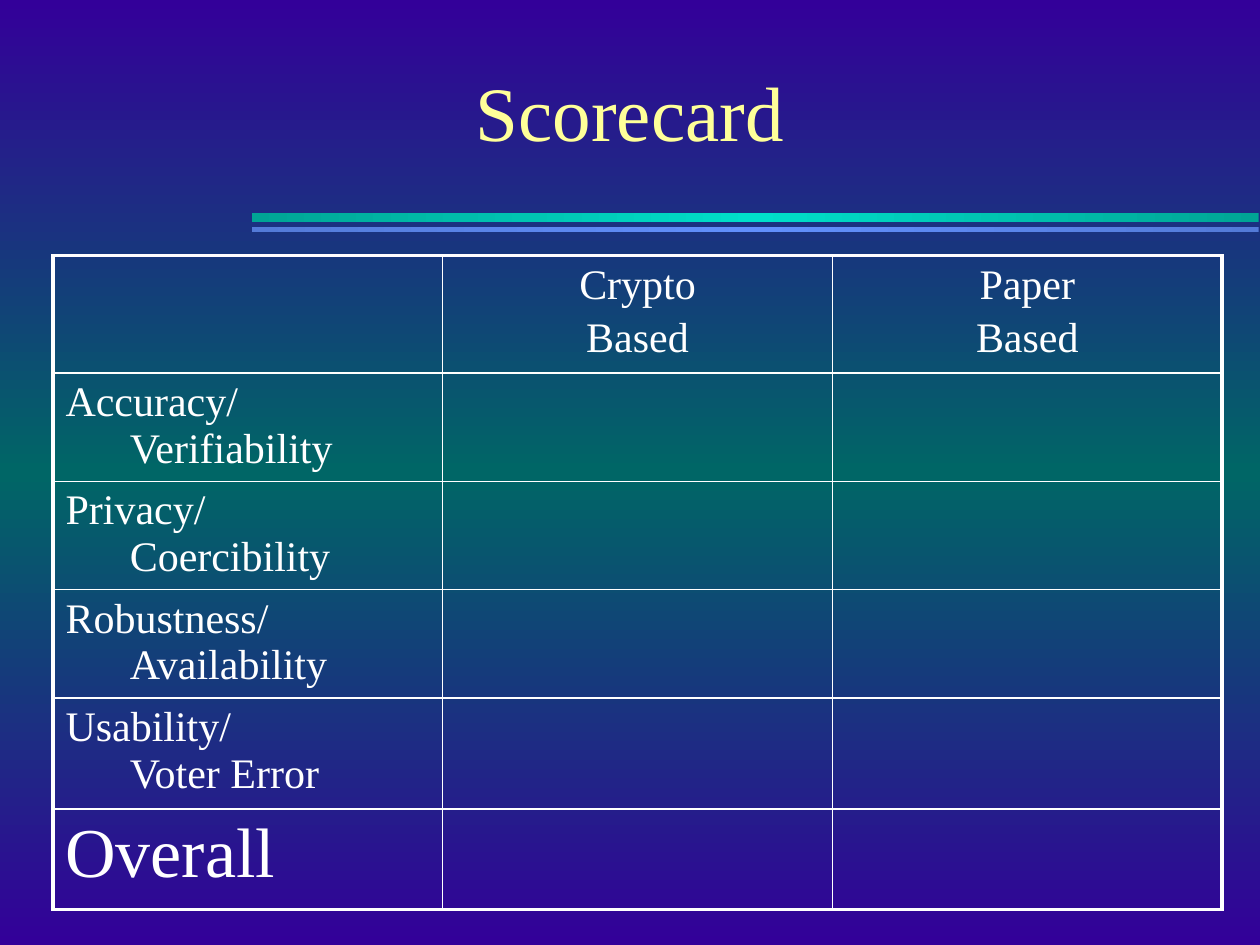
from copy import deepcopy
from dataclasses import dataclass

from pptx import Presentation
from pptx.dml.color import RGBColor
from pptx.enum.shapes import MSO_SHAPE as Shape
from pptx.enum.text import MSO_ANCHOR as Anchor, PP_ALIGN as Align
from pptx.oxml import parse_xml
from pptx.oxml.ns import nsdecls, qn
from pptx.util import Inches, Pt


@dataclass(frozen=True)
class Theme:
    font: str = "Times New Roman"
    title: str = "FFFF99"
    text: str = "FFFFFF"
    line: str = "FFFFFF"
    background: tuple = ("330099", "006666", "330099")
    upper_bar: tuple = ("00A595", "00DFCA", "00A595")
    lower_bar: tuple = ("537AD8", "618FFD", "537AD8")
    title_size: float = 44
    body_size: float = 24
    total_size: float = 40
    outer_line: float = 2.25
    inner_line: float = 1


THEME = Theme()
TITLE_BOX = (0.75, 0.25, 8.5, 1.25)
RULE_BOX = (2, 1.69, 7.99, 0.15)
TABLE_BOX = (0.42, 2.03, 9.28, 5.19)
ROW_HEIGHTS = (0.93, 0.86, 0.86, 0.86, 0.88, 0.8)
HEADINGS = ("", "Crypto\nBased", "Paper\nBased")
CRITERIA = (
    "Accuracy/\vVerifiability",
    "Privacy/\vCoercibility",
    "Robustness/\vAvailability",
    "Usability/\vVoter Error",
    "Overall",
)


def paint_gradient(fill, owner, colours, angle):
    """Fill with three evenly spaced colour stops."""
    fill.gradient()
    fill.gradient_angle = angle
    stop_list = owner.find(".//" + qn("a:gsLst"))
    stop_list.append(deepcopy(stop_list[-1]))
    for index, (stop, colour) in enumerate(zip(fill.gradient_stops, colours)):
        stop.position = index / 2
        stop.color.rgb = RGBColor.from_string(colour)


def format_para(para, size, colour, align):
    para.alignment = align
    for span in para.runs:
        span.font.name = THEME.font
        span.font.size = Pt(size)
        span.font.color.rgb = RGBColor.from_string(colour)


def add_title(page, box, text):
    title = page.shapes.title
    title.left, title.top, title.width, title.height = map(Inches, box)
    title.text_frame.text = text
    title.text_frame.vertical_anchor = Anchor.MIDDLE
    format_para(title.text_frame.paragraphs[0], THEME.title_size, THEME.title, Align.CENTER)


def add_double_rule(page, box):
    left, top, width, height = box
    # Each bar: offset and thickness as shares of the box height
    for offset, share, colours in (
        (0, 0.47, THEME.upper_bar),
        (0.73, 0.27, THEME.lower_bar),
    ):
        bar = page.shapes.add_shape(
            Shape.RECTANGLE, Inches(left), Inches(top + offset * height),
            Inches(width), Inches(share * height))
        bar.shadow.inherit = False
        bar.line.fill.background()
        paint_gradient(bar.fill, bar.element, colours, 0)


def set_borders(cell, outer_sides):
    properties = cell._tc.get_or_add_tcPr()
    for side in "LRTB":
        width = THEME.outer_line if side in outer_sides else THEME.inner_line
        properties.append(parse_xml(
            f'<a:ln{side} {nsdecls("a")} w="{Pt(width)}"><a:solidFill>'
            f'<a:srgbClr val="{THEME.line}"/></a:solidFill></a:ln{side}>'))


def fill_cell(cell, text, size, align):
    cell.text_frame.text = text
    for index, para in enumerate(cell.text_frame.paragraphs):
        if index:
            para.space_before = Pt(4)
        if "\v" in text:
            # Hanging indent for the second line
            indent = para._p.get_or_add_pPr()
            indent.set("marL", str(Inches(0.51)))
            indent.set("indent", str(Inches(-0.51)))
        format_para(para, size, THEME.text, align)


def add_scorecard(page, box):
    rows, columns = len(ROW_HEIGHTS), len(HEADINGS)
    table = page.shapes.add_table(rows, columns, *map(Inches, box)).table
    table.first_row = table.horz_banding = False
    for column in table.columns:
        column.width = Inches(box[2] / columns)
    for row, height in zip(table.rows, ROW_HEIGHTS):
        row.height = Inches(height)

    # Heavy frame, thin inner grid
    for r in range(rows):
        for c in range(columns):
            cell = table.cell(r, c)
            edges = {"L": c == 0, "R": c == columns - 1, "T": r == 0, "B": r == rows - 1}
            set_borders(cell, [side for side, outer in edges.items() if outer])
            cell.fill.background()

    # Headings across, criteria down
    for c, heading in enumerate(HEADINGS):
        if heading:
            fill_cell(table.cell(0, c), heading, THEME.body_size, Align.CENTER)
    for r, criterion in enumerate(CRITERIA, start=1):
        size = THEME.total_size if r == rows - 1 else THEME.body_size
        fill_cell(table.cell(r, 0), criterion, size, Align.LEFT)


def main():
    deck = Presentation()
    deck.slide_width, deck.slide_height = Inches(10), Inches(7.5)
    page = deck.slides.add_slide(deck.slide_layouts[5])
    paint_gradient(page.background.fill, page.element, THEME.background, 270)
    add_double_rule(page, RULE_BOX)
    add_title(page, TITLE_BOX, "Scorecard")
    add_scorecard(page, TABLE_BOX)
    deck.save("out.pptx")


if __name__ == "__main__":
    main()
